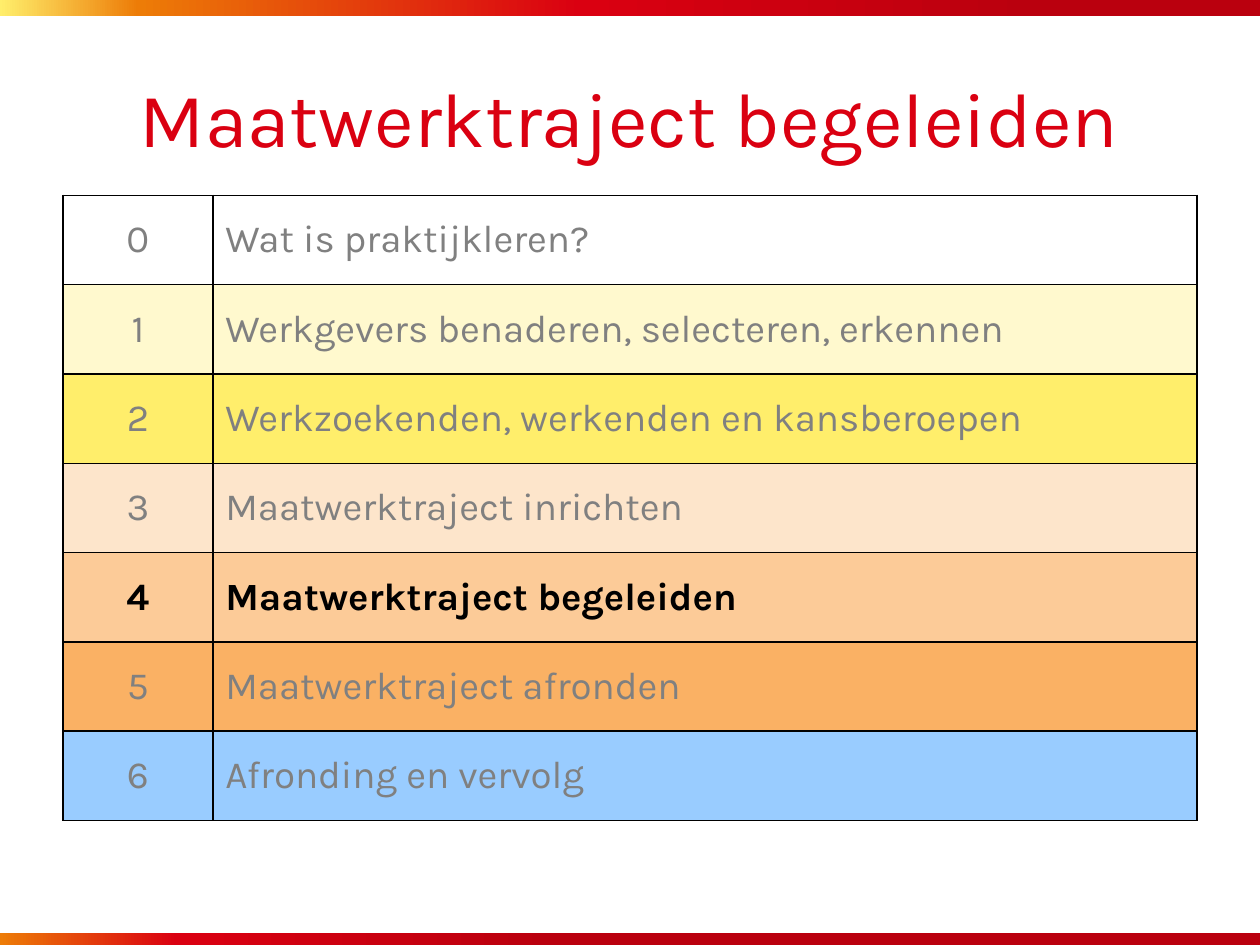
import pptx
import pptx.util
import pptx.dml.color
import pptx.enum.shapes
import pptx.enum.text
import pptx.oxml
import pptx.oxml.ns
from lxml import etree

Cm = pptx.util.Cm
Pt = pptx.util.Pt
RGB = pptx.dml.color.RGBColor.from_string
ALIGN = pptx.enum.text.PP_ALIGN
MIDDLE = pptx.enum.text.MSO_ANCHOR.MIDDLE
qn = pptx.oxml.ns.qn

FONT = "Karla"
COLORS = {
    "title": "DA0011",
    "muted": "808080",
    "active": "000000",
    "border": "000000",
    "dark_red": "BA000E",
    "red": "DA0011",
    "orange": "ED7C07",
    "yellow": "FFEE6B",
}
TITLE = "Maatwerktraject begeleiden"
CHAPTERS = [
    ("Wat is praktijkleren?", None),
    ("Werkgevers benaderen, selecteren, erkennen", "FFF9CE"),
    ("Werkzoekenden, werkenden en kansberoepen", "FFEE6B"),
    ("Maatwerktraject inrichten", "FDE5CB"),
    ("Maatwerktraject begeleiden", "FCCB98"),
    ("Maatwerktraject afronden", "FAB164"),
    ("Afronding en vervolg", "99CCFF"),
]
ACTIVE = 4
BARS = [
    (0, [(18, "dark_red"), (54, "red"), (89, "orange"), (100, "yellow")]),
    (18.8, [(56, "dark_red"), (86, "red"), (100, "orange")]),
]
LEFT, WIDTH = 1.27, 22.86
TABLE_TOP, ROW_HEIGHT = 3.94, 1.8
COL_WIDTHS = [3.02, 19.84]


def add_bar(s, top, stops):
    bar = s.shapes.add_shape(pptx.enum.shapes.MSO_SHAPE.RECTANGLE,
                             Cm(0), Cm(top), Cm(25.45), Cm(0.33))
    bar.shadow.inherit = False
    bar.line.fill.background()
    bar.fill.gradient()
    bar.fill.gradient_angle = 180
    gs_list = bar.fill._fill._gradFill.find(qn("a:gsLst"))
    for gs in list(gs_list):
        gs_list.remove(gs)
    for position, color in stops:
        gs = etree.SubElement(gs_list, qn("a:gs"), pos=str(position * 1000))
        etree.SubElement(gs, qn("a:srgbClr"), val=COLORS[color])


def set_borders(cell):
    tcPr = cell._tc.get_or_add_tcPr()
    for i, side in enumerate(("lnL", "lnR", "lnT", "lnB")):
        ln = etree.Element(qn("a:" + side), w=str(Pt(1)))
        fill = etree.SubElement(ln, qn("a:solidFill"))
        etree.SubElement(fill, qn("a:srgbClr"), val=COLORS["border"])
        tcPr.insert(i, ln)


def format_cell(cell, text, align, fill, active):
    cell.text_frame.text = text
    cell.vertical_anchor = MIDDLE
    p = cell.text_frame.paragraphs[0]
    p.alignment = align
    font = p.runs[0].font
    font.name, font.size, font.bold = FONT, Pt(22), active
    font.color.rgb = RGB(COLORS["active" if active else "muted"])
    if fill:
        cell.fill.solid()
        cell.fill.fore_color.rgb = RGB(fill)
    else:
        cell.fill.background()
    set_borders(cell)


def main():
    prs = pptx.Presentation()
    prs.slide_width, prs.slide_height = Cm(25.4), Cm(19.05)
    s = prs.slides.add_slide(prs.slide_layouts[5])

    for top, stops in BARS:
        add_bar(s, top, stops)

    title = s.shapes.title
    title.left, title.top = Cm(LEFT), Cm(0.76)
    title.width, title.height = Cm(WIDTH), Cm(3.18)
    tf = title.text_frame
    tf.text = TITLE
    tf.auto_size = pptx.enum.text.MSO_AUTO_SIZE.NONE
    tf.vertical_anchor = MIDDLE
    p = tf.paragraphs[0]
    p.alignment = ALIGN.CENTER
    font = p.runs[0].font
    font.name, font.size = FONT, Pt(44)
    font.color.rgb = RGB(COLORS["title"])

    table = s.shapes.add_table(len(CHAPTERS), len(COL_WIDTHS),
                               Cm(LEFT), Cm(TABLE_TOP), Cm(WIDTH),
                               Cm(ROW_HEIGHT * len(CHAPTERS))).table
    table.first_row = table.horz_banding = False
    for column, width in zip(table.columns, COL_WIDTHS):
        column.width = Cm(width)
    for i, (name, fill) in enumerate(CHAPTERS):
        table.rows[i].height = Cm(ROW_HEIGHT)
        format_cell(table.cell(i, 0), str(i), ALIGN.CENTER, fill, i == ACTIVE)
        format_cell(table.cell(i, 1), name, ALIGN.LEFT, fill, i == ACTIVE)

    prs.save("out.pptx")


if __name__ == "__main__":
    main()
